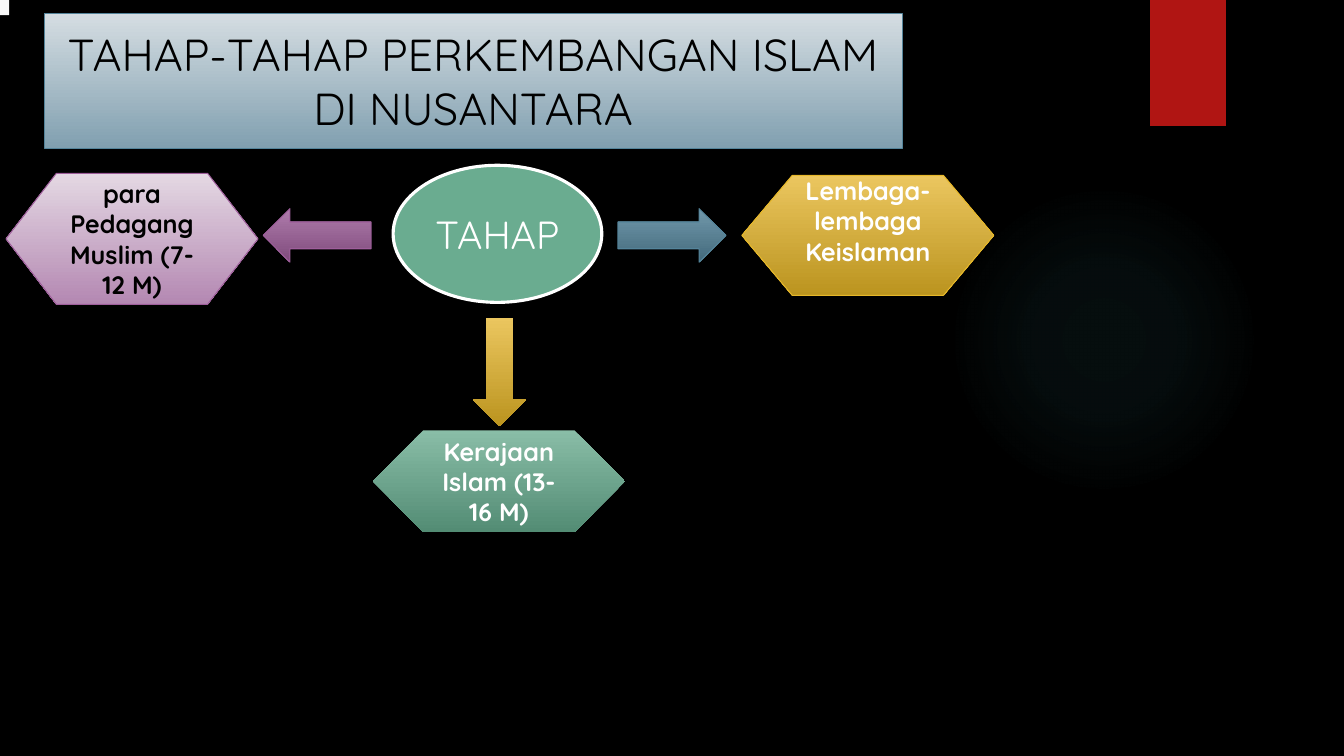
"""Build the slide on the stages of Islam's growth in Nusantara."""
from lxml import etree
from pptx import Presentation
from pptx.dml.color import RGBColor
from pptx.enum.shapes import MSO_SHAPE
from pptx.enum.text import MSO_ANCHOR, MSO_AUTO_SIZE, PP_ALIGN
from pptx.oxml import parse_xml
from pptx.oxml.ns import nsdecls
from pptx.util import Inches, Pt

RECT, OVAL = MSO_SHAPE.RECTANGLE, MSO_SHAPE.OVAL
HEXAGON = MSO_SHAPE.FLOWCHART_PREPARATION
LEFT, RIGHT, DOWN = MSO_SHAPE.LEFT_ARROW, MSO_SHAPE.RIGHT_ARROW, MSO_SHAPE.DOWN_ARROW
TOP, MIDDLE = MSO_ANCHOR.TOP, MSO_ANCHOR.MIDDLE
CENTER, NO_FIT = PP_ALIGN.CENTER, MSO_AUTO_SIZE.NONE

BLACK, WHITE = RGBColor(0, 0, 0), RGBColor(0xFF, 0xFF, 0xFF)
RED, PALE = RGBColor(0xB0, 0x15, 0x13), RGBColor(0xF9, 0xF9, 0xF9)
TEAL, GREEN = RGBColor(0x50, 0xB9, 0xC1), RGBColor(0x6A, 0xAC, 0x90)
BLUE_EDGE, PURPLE_EDGE = RGBColor(0x54, 0x84, 0x9A), RGBColor(0x9E, 0x5E, 0x9B)
GOLD_EDGE = RGBColor(0xE6, 0xB7, 0x29)
SILVER = (RGBColor(0xD5, 0xDD, 0xE2), RGBColor(0x81, 0xA0, 0xB0))
PURPLE = (RGBColor(0xAF, 0x7C, 0xAC), RGBColor(0x7F, 0x4B, 0x7C))
BLUE = (RGBColor(0x71, 0x98, 0xAB), RGBColor(0x43, 0x6A, 0x7C))
GOLD = (RGBColor(0xEB, 0xC6, 0x5F), RGBColor(0xBB, 0x94, 0x1F))
LILAC = (RGBColor(0xE4, 0xD8, 0xE3), RGBColor(0xB4, 0x88, 0xB2))
SAGE = (RGBColor(0x89, 0xBD, 0xA7), RGBColor(0x53, 0x8C, 0x74))

deck = Presentation()
deck.slide_width, deck.slide_height = Inches(13.33), Inches(7.5)
slide = deck.slides.add_slide(deck.slide_layouts[5])
slide.background.fill.solid()
slide.background.fill.fore_color.rgb = BLACK


def paint(shape, colors, edge=None, weight=0.75):
    """Fill with one colour or a downward gradient, then outline."""
    shape.shadow.inherit = False
    if isinstance(colors, RGBColor):
        shape.fill.solid()
        shape.fill.fore_color.rgb = colors
    else:
        shape.fill.gradient()
        shape.fill.gradient_angle = 270
        for stop, color, position in zip(shape.fill.gradient_stops, colors, (0, 1)):
            stop.color.rgb, stop.position = color, position
    if edge is None:
        shape.line.fill.background()
    else:
        shape.line.color.rgb, shape.line.width = edge, Pt(weight)


def write(shape, text, size=18, color=WHITE, bold=False, anchor=MIDDLE):
    """Set centred text in the shape."""
    frame = shape.text_frame
    frame.text = text
    frame.word_wrap, frame.auto_size, frame.vertical_anchor = True, NO_FIT, anchor
    if anchor == TOP:
        frame.margin_top = 0
    paragraph = frame.paragraphs[0]
    paragraph.alignment = CENTER
    font = paragraph.runs[0].font
    font.name, font.size, font.bold, font.color.rgb = "Quicksand", Pt(size), bold, color


title = slide.shapes.title
title.left, title.width = (int(deck.slide_width * s / 100) for s in (3.3, 63.83))
title.top, title.height = (int(deck.slide_height * s / 100) for s in (1.73, 17.87))
title._element.spPr.append(parse_xml(
    f'<a:prstGeom {nsdecls("a")} prst="roundRect"><a:avLst/></a:prstGeom>'))
paint(title, SILVER, BLUE_EDGE)
write(title, "TAHAP-TAHAP PERKEMBANGAN ISLAM DI NUSANTARA", size=32, color=BLACK)

ARROW_LONG, ARROW_WIDE = (8.03, 14.4), (3.98, 7.07)
STAGE_WIDTH = 18.75
stage = {"bold": True}
parts = [
    (OVAL, (70.58, 24.4, 23.1, 41.07), TEAL, None, None, {}),
    (RECT, (85.58, 0, 5.63, 16.67), RED, None, None, {}),
    (RECT, (0, 0, 0.68, 2), PALE, None, None, {}),
    (OVAL, (29.25, 21.87, 15.53, 18.13), GREEN, WHITE, "TAHAP", {"size": 28}),
    (LEFT, (19.58, 27.6, ARROW_LONG[0], ARROW_WIDE[1]), PURPLE, PURPLE_EDGE, None, {}),
    (RIGHT, (45.98, 27.6, ARROW_LONG[0], ARROW_WIDE[1]), BLUE, BLUE_EDGE, None, {}),
    (DOWN, (35.18, 42, ARROW_WIDE[0], ARROW_LONG[1]), GOLD, None, None, {}),
    (HEXAGON, (0.45, 22.93, STAGE_WIDTH, 17.33), LILAC, PURPLE_EDGE,
     "para Pedagang Muslim (7-12 M)", {**stage, "color": BLACK}),
    (HEXAGON, (55.2, 23.2, STAGE_WIDTH, 15.87), GOLD, GOLD_EDGE,
     "Lembaga-lembaga Keislaman", {**stage, "anchor": TOP}),
    (HEXAGON, (27.75, 56.93, STAGE_WIDTH, 13.47), SAGE, None,
     "Kerajaan Islam (13-16 M)", stage),
]
for kind, (x, y, w, h), colors, edge, text, style in parts:
    part = slide.shapes.add_shape(
        kind, int(deck.slide_width * x / 100), int(deck.slide_height * y / 100),
        int(deck.slide_width * w / 100), int(deck.slide_height * h / 100))
    paint(part, colors, edge, 2.25 if edge == WHITE else 0.75)
    if text:
        write(part, text, **style)
    if colors == TEAL:
        stops = "".join(
            f'<a:gs pos="{position * 1000}"><a:srgbClr val="{TEAL}">'
            f'<a:alpha val="{alpha * 1000}"/></a:srgbClr></a:gs>'
            for position, alpha in ((0, 7), (36, 6), (69, 0), (100, 0)))
        glow = parse_xml(
            f'<a:gradFill {nsdecls("a")}><a:gsLst>{stops}</a:gsLst><a:path path="circle">'
            '<a:fillToRect l="50000" t="50000" r="50000" b="50000"/></a:path></a:gradFill>')
        solid = next(e for e in part._element.spPr if etree.QName(e).localname == "solidFill")
        part._element.spPr.replace(solid, glow)

deck.save("out.pptx")
